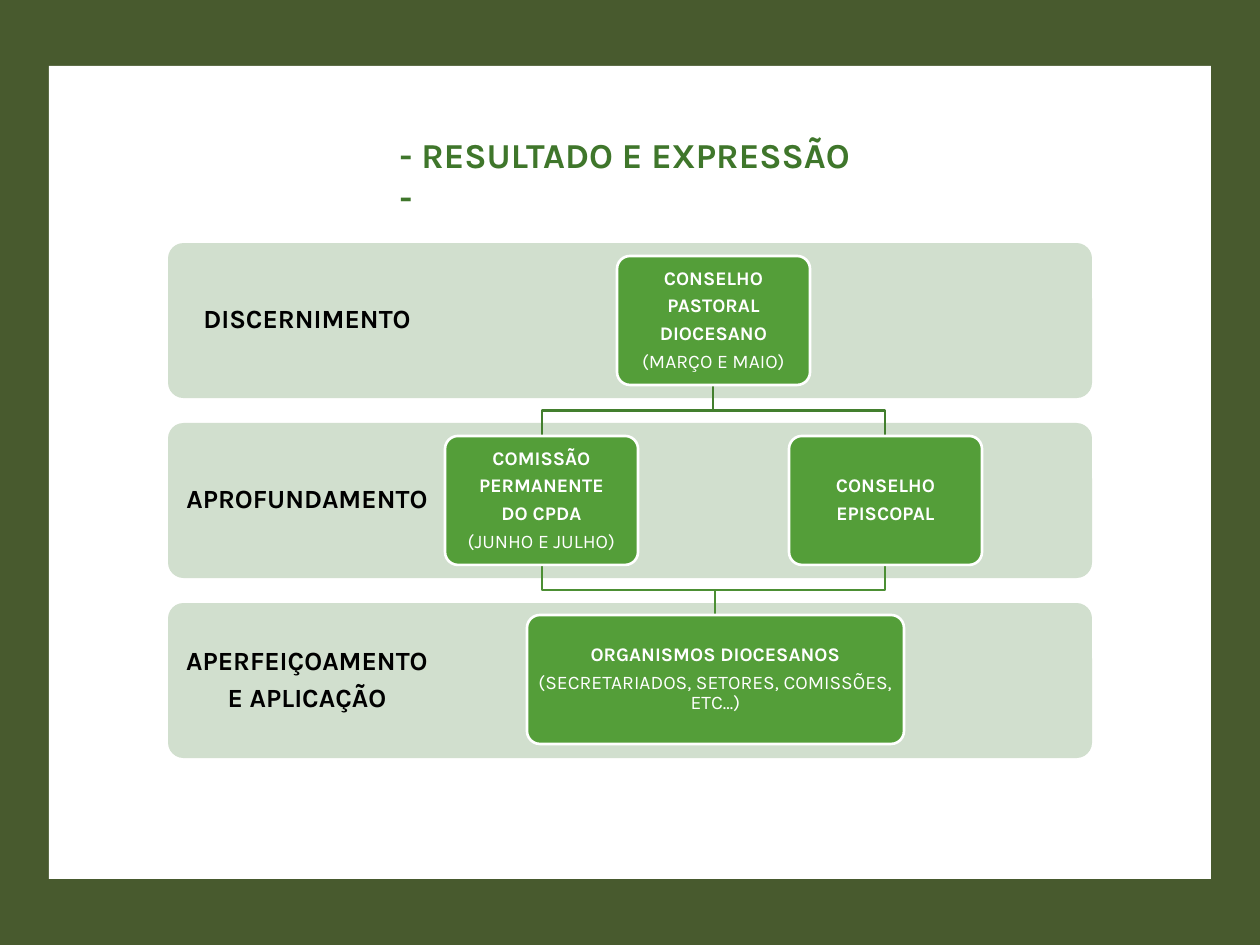
from dataclasses import dataclass

from pptx import Presentation
from pptx import util as u
from pptx.dml.color import RGBColor
from pptx.enum import shapes, text

EMU_PER_PX = 914400 / 126


@dataclass(frozen=True)
class Theme:
    """Colours, font and type sizes of the slide."""
    font: str = "Karla"
    frame: str = "485A2E"
    paper: str = "FFFFFF"
    title: str = "3F762B"
    band: str = "D1DFCE"
    card: str = "549E39"
    label: str = "000000"
    upper_link: str = "437F2E"
    lower_link: str = "4C8F34"
    title_pt: int = 20
    label_pt: int = 15
    card_pt: int = 11
    line_pt: float = 1.5


THEME = Theme()
BAND_LEFT, BAND_TOP, BAND_W, BAND_H, BAND_PITCH = 168, 243, 924, 155, 180
CARD_W, CARD_H = 193, 129
BANDS = [["DISCERNIMENTO"], ["APROFUNDAMENTO"], ["APERFEIÇOAMENTO", "E APLICAÇÃO"]]


def px(n):
    """Turn pixels into EMU."""
    return u.Emu(round(n * EMU_PER_PX))


def rgb(color):
    """Turn a hex string into a colour."""
    return RGBColor.from_string(color)


def add_box(slide, kind, x, y, w, h, fill, line=None):
    """Add a filled shape with an optional outline."""
    sp = slide.shapes.add_shape(kind, px(x), px(y), px(w), px(h))
    sp.shadow.inherit = False
    sp.fill.solid()
    sp.fill.fore_color.rgb = rgb(fill)
    if line:
        sp.line.color.rgb = rgb(line)
        sp.line.width = u.Pt(THEME.line_pt)
    else:
        sp.line.fill.background()
    return sp


def style(p, size, color, bold=True):
    """Set the font of a paragraph."""
    p.font.name = THEME.font
    p.font.size = u.Pt(size)
    p.font.bold = bold
    p.font.color.rgb = rgb(color)


def write_lines(sp, lines, size, color, inset, right, note=None):
    """Write centred bold lines, then an optional plain note."""
    tf = sp.text_frame
    tf.word_wrap = True
    tf.vertical_anchor = text.MSO_ANCHOR.MIDDLE
    tf.margin_left = tf.margin_top = tf.margin_bottom = px(inset)
    tf.margin_right = px(right)
    rows = [(line, True) for line in lines] + ([(note, False)] if note else [])
    for i, (line, bold) in enumerate(rows):
        p = tf.add_paragraph() if i else tf.paragraphs[0]
        p.text = line
        p.alignment = text.PP_ALIGN.CENTER
        p.line_spacing = 0.9
        p.space_after = u.Pt(round(size * 0.35, 2))
        style(p, size, color, bold)


def add_title(slide, line):
    """Add the slide title."""
    tf = slide.shapes.add_textbox(px(387), px(127), px(488), px(55)).text_frame
    tf.word_wrap = True
    p = tf.paragraphs[0]
    p.text = line
    style(p, THEME.title_pt, THEME.title)


def add_band(slide, row, lines):
    """Add a stage band with its label at the left."""
    sp = add_box(slide, shapes.MSO_SHAPE.ROUNDED_RECTANGLE, BAND_LEFT,
                 BAND_TOP + row * BAND_PITCH, BAND_W, BAND_H, THEME.band)
    sp.adjustments[0] = 0.1
    write_lines(sp, lines, THEME.label_pt, THEME.label, 10, 656)


def add_card(slide, x, y, lines, note=None, w=CARD_W):
    """Add a body card."""
    sp = add_box(slide, shapes.MSO_SHAPE.ROUNDED_RECTANGLE, x, y, w, CARD_H,
                 THEME.card, THEME.paper)
    sp.adjustments[0] = 0.1
    write_lines(sp, lines, THEME.card_pt, THEME.paper, 6, 6, note)


def add_link(slide, x1, y1, x2, y2, color):
    """Add a link that bends halfway down."""
    mid = (y1 + y2) / 2
    start, *rest = [(px(x), px(y)) for x, y in
                    [(x1, y1), (x1, mid), (x2, mid), (x2, y2)]]
    fb = slide.shapes.build_freeform(*start, scale=1.0)
    fb.add_line_segments(rest, close=False)
    sp = fb.convert_to_shape()
    sp.shadow.inherit = False
    sp.fill.background()
    sp.line.color.rgb = rgb(color)
    sp.line.width = u.Pt(THEME.line_pt)


def main():
    """Build the slide and save it."""
    prs = Presentation()
    prs.slide_width, prs.slide_height = px(1260), px(945)
    slide = prs.slides.add_slide(prs.slide_layouts[6])

    rect = shapes.MSO_SHAPE.RECTANGLE
    add_box(slide, rect, 0, 0, 1260, 945, THEME.frame)
    add_box(slide, rect, 49, 66, 1162, 813, THEME.paper)
    add_title(slide, "- RESULTADO E EXPRESSÃO -")
    for row, lines in enumerate(BANDS):
        add_band(slide, row, lines)

    top, middle, bottom = 256, 436, 615
    for x in (542, 885):
        add_link(slide, 713, top + CARD_H, x, middle, THEME.upper_link)
        add_link(slide, x, middle + CARD_H, 715, bottom, THEME.lower_link)

    add_card(slide, 617, top, ["CONSELHO", "PASTORAL", "DIOCESANO"], "(MARÇO E MAIO)")
    add_card(slide, 445, middle, ["COMISSÃO", "PERMANENTE", "DO CPDA"], "(JUNHO E JULHO)")
    add_card(slide, 789, middle, ["CONSELHO", "EPISCOPAL"])
    add_card(slide, 527, bottom, ["ORGANISMOS DIOCESANOS"],
             "(SECRETARIADOS, SETORES, COMISSÕES, ETC...)", w=377)
    prs.save("out.pptx")


if __name__ == "__main__":
    main()
